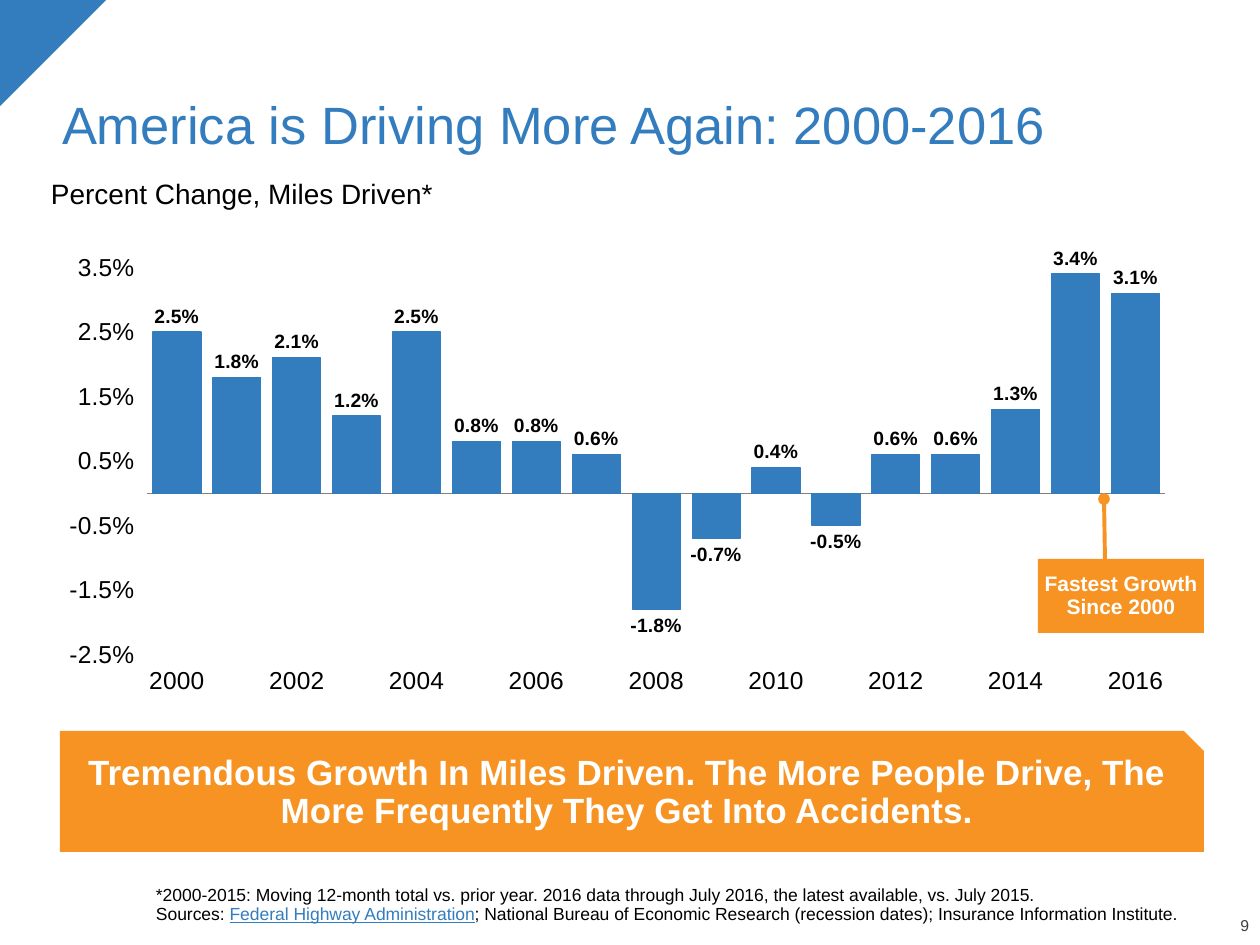
"""Build the slide on miles driven in America, 2000-2016."""
from dataclasses import dataclass

from lxml import etree
from pptx import Presentation
from pptx import util as u
from pptx.chart.data import CategoryChartData
from pptx.dml.color import RGBColor
from pptx.enum import chart as ch, shapes, text
from pptx.oxml import parse_xml
from pptx.oxml.ns import nsdecls, qn

ALIGN, ANCHOR, SHAPE = text.PP_ALIGN, text.MSO_ANCHOR, shapes.MSO_SHAPE


@dataclass(frozen=True)
class Theme:
    font: str = "Arial"
    blue: str = "337DBE"
    orange: str = "F69322"
    black: str = "000000"
    white: str = "FFFFFF"
    dark: str = "404040"
    grey: str = "808080"
    title: int = 30
    banner: int = 20
    subtitle: int = 16
    axis: int = 14
    callout: int = 12
    label: int = 11
    note: int = 10
    number: int = 9


def px(n):
    return u.Emu(round(n * 914400 / 126))


def rgb(color):
    return RGBColor.from_string(color)


class Deck:
    def __init__(self, theme):
        self.t = theme
        self.prs = Presentation()
        self.prs.slide_width, self.prs.slide_height = px(1260), px(945)
        self.s = self.prs.slides.add_slide(self.prs.slide_layouts[6])

    def style(self, font, size, color, bold=False):
        font.name, font.size, font.bold = self.t.font, u.Pt(size), bold
        font.color.rgb = rgb(color)

    def fill_text(self, sp, runs, size, color, bold=False, align=ALIGN.LEFT,
                  anchor=ANCHOR.TOP, inset=(13, 6, 13, 6)):
        tf = sp.text_frame
        tf.word_wrap, tf.vertical_anchor = True, anchor
        tf.margin_left, tf.margin_top, tf.margin_right, tf.margin_bottom = map(px, inset)
        p = tf.paragraphs[0]
        p.alignment, p.line_spacing = align, 0.9
        self.style(p.font, size, color, bold)
        for words, link in runs:
            for i, line in enumerate(words.split("\n")):
                if i:
                    p.add_line_break()
                r = p.add_run()
                r.text = line
                if link:
                    r.font.color.rgb = rgb(self.t.blue)
                    r.font.underline = True

    def label(self, box, words, size, color, **kw):
        runs = [(words, False)] if isinstance(words, str) else words
        self.fill_text(self.s.shapes.add_textbox(*map(px, box)), runs, size, color, **kw)

    def block(self, kind, box, color, words="", size=0, inset=(0, 0, 0, 0)):
        sp = self.s.shapes.add_shape(kind, *map(px, box))
        sp.shadow.inherit = False
        sp.fill.solid()
        sp.fill.fore_color.rgb = rgb(color)
        sp.line.fill.background()
        if words:
            self.fill_text(sp, [(words, False)], size, self.t.white, bold=True,
                           align=ALIGN.CENTER, anchor=ANCHOR.MIDDLE, inset=inset)
        return sp

    def pointer(self, start, end, color):
        sp = self.s.shapes.add_connector(shapes.MSO_CONNECTOR.STRAIGHT, *map(px, start + end))
        sp.line.color.rgb, sp.line.width = rgb(color), u.Pt(2.25)
        ln = sp._element.spPr.find(qn("a:ln"))
        etree.SubElement(ln, qn("a:tailEnd"), type="oval")
        etree.SubElement(sp._element.spPr, qn("a:effectLst"))

    def columns(self, box, cats, vals, layout):
        data = CategoryChartData(number_format="0.0%")
        data.categories = cats
        data.add_series("Series 1", vals)
        chart = self.s.shapes.add_chart(
            ch.XL_CHART_TYPE.COLUMN_CLUSTERED, *map(px, box), data).chart
        chart.has_legend = chart.has_title = False
        self.style(chart.font, self.t.axis, self.t.black)

        cat, val = chart.category_axis, chart.value_axis
        for axis in (cat, val):
            axis.has_major_gridlines = False
            axis.major_tick_mark = ch.XL_TICK_MARK.NONE
            axis.tick_label_position = ch.XL_TICK_LABEL_POSITION.LOW
        cat.format.line.color.rgb = rgb(self.t.grey)
        val.format.line.fill.background()
        val.minimum_scale, val.maximum_scale, val.major_unit = -0.025, 0.04, 0.01
        val.tick_labels.number_format = "0.0%"
        val.tick_labels.number_format_is_linked = False

        plot = chart.plots[0]
        plot.gap_width, plot.vary_by_categories = 25, False
        ser = plot.series[0]
        ser.invert_if_negative = False
        ser.format.fill.solid()
        ser.format.fill.fore_color.rgb = rgb(self.t.blue)
        ser.format.line.color.rgb, ser.format.line.width = rgb(self.t.blue), u.Pt(0.75)
        labels = ser.data_labels
        labels.show_value = True
        labels.number_format, labels.number_format_is_linked = "0.0%", False
        labels.position = ch.XL_LABEL_POSITION.OUTSIDE_END
        self.style(labels.font, self.t.label, self.t.black, bold=True)

        area = chart._chartSpace.chart.plotArea
        for old in area.findall(qn("c:layout")):
            area.remove(old)
        modes = "".join(f'<c:{k}Mode val="edge"/>' for k in "xy")
        sizes = "".join(f'<c:{k} val="{v}"/>' for k, v in zip("xywh", layout))
        area.insert(0, parse_xml(
            f'<c:layout {nsdecls("c")}><c:manualLayout><c:layoutTarget val="inner"/>'
            f'{modes}{sizes}</c:manualLayout></c:layout>'))


def main():
    t = Theme()
    d = Deck(t)
    d.block(SHAPE.RIGHT_TRIANGLE, (0, 0, 106, 106), t.blue).rotation = 90
    d.label((1188, 919, 61, 16), "9", t.number, t.dark, align=ALIGN.RIGHT,
            anchor=ANCHOR.BOTTOM, inset=(0, 0, 0, 0))
    d.label((49, 31, 1166, 131), "America is Driving More Again: 2000-2016",
            t.title, t.blue, anchor=ANCHOR.BOTTOM)
    d.label((38, 174, 1166, 54), "Percent Change, Miles Driven*", t.subtitle, t.black)
    d.label((156, 867, 1058, 57), [
        ("*2000-2015: Moving 12-month total vs. prior year. 2016 data through July 2016, "
         "the latest available, vs. July 2015.\nSources: ", False),
        ("Federal Highway Administration", True),
        ("; National Bureau of Economic Research (recession dates); "
         "Insurance Information Institute.", False),
    ], t.note, t.black, anchor=ANCHOR.BOTTOM, inset=(0, 0, 0, 0))

    years = ["" if y % 2 else str(y) for y in range(2000, 2017)]
    change = [0.025, 0.018, 0.021, 0.012, 0.025, 0.008, 0.008, 0.006, -0.018,
              -0.007, 0.004, -0.005, 0.006, 0.006, 0.013, 0.034, 0.031]
    d.columns((48, 203, 1138, 539), years, change, (0.087, 0.06, 0.895, 0.778))

    d.block(SHAPE.RECTANGLE, (1038, 559, 166, 74), t.orange,
            "Fastest Growth Since 2000", t.callout, (6, 0, 6, 0))
    d.pointer((1105, 559), (1104, 499), t.orange)
    d.block(SHAPE.SNIP_1_RECTANGLE, (60, 731, 1144, 121), t.orange,
            "Tremendous Growth In Miles Driven. The More People Drive, "
            "The More Frequently They Get Into Accidents.", t.banner, (13, 6, 13, 13))
    d.prs.save("out.pptx")


if __name__ == "__main__":
    main()
